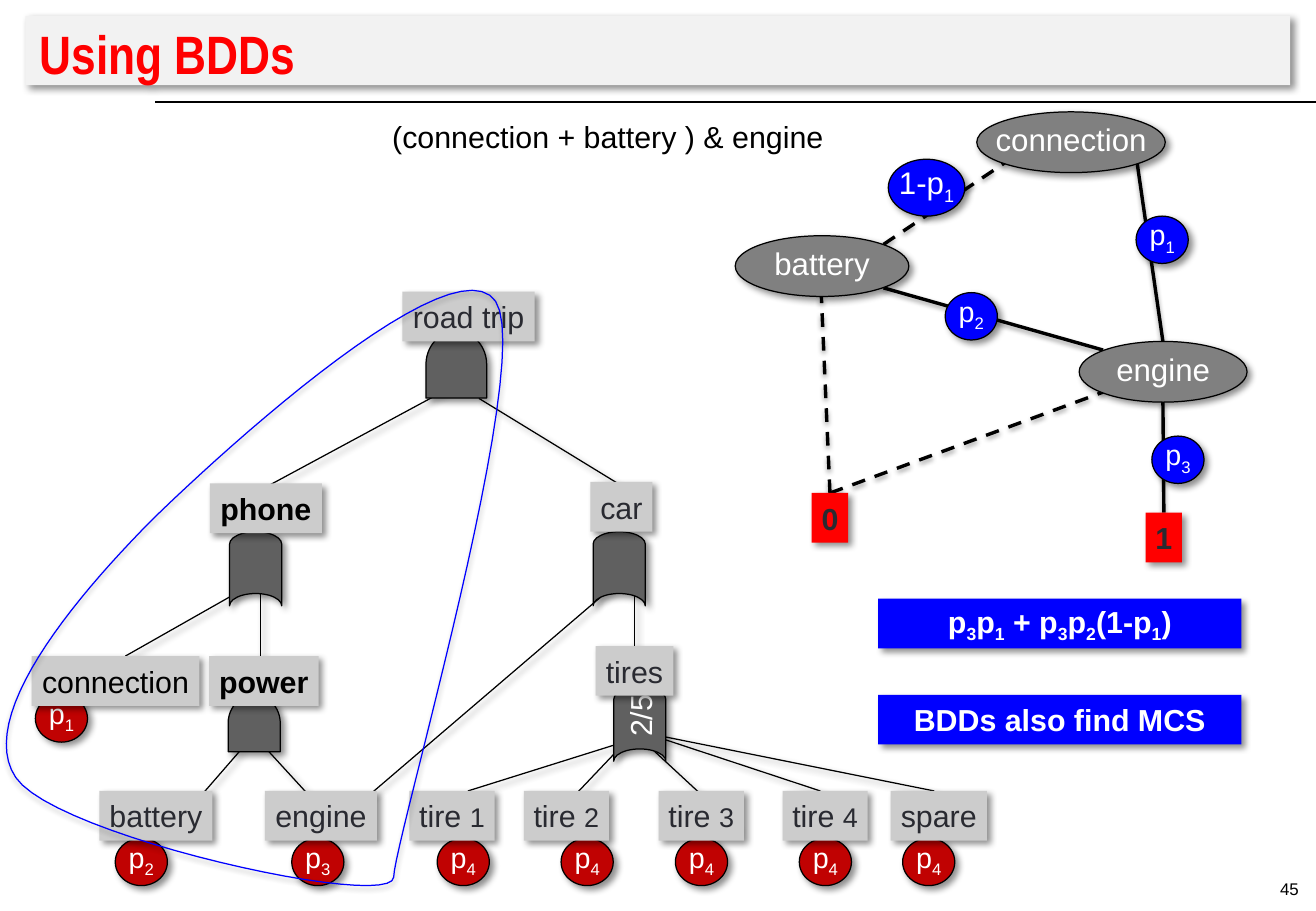
from pptx import Presentation
from pptx import util as u
from pptx.dml.color import RGBColor
from pptx.enum import dml, shapes, text
from pptx.oxml.ns import qn
from lxml import etree

theme = {
    "font": "Arial", "title font": "Arial Narrow",
    "black": "000000", "white": "FFFFFF", "ink": "292A31", "red": "FF0000",
    "band": "F2F2F2", "label": "CCCCCC", "gate": "606060", "event": "C00202",
    "node": "808080", "blue": "0000FF",
    "title": 32, "body": 18, "node text": 18.5, "chance": 17, "digit": 16, "number": 10,
}
CENTER, RIGHT, LEFT = text.PP_ALIGN.CENTER, text.PP_ALIGN.RIGHT, text.PP_ALIGN.LEFT
RECT, OVAL = shapes.MSO_SHAPE.RECTANGLE, shapes.MSO_SHAPE.OVAL
AND, OR = shapes.MSO_SHAPE.FLOWCHART_DELAY, shapes.MSO_SHAPE.FLOWCHART_STORED_DATA
BOX_SHADOW, EDGE_SHADOW, LOOP_SHADOW = (43, 4, 3, 45), (38, 3.1, 1.6, 90), (35, 3.1, 1.8, 90)
label_frame = {"margin_left": u.Cm(0.2), "margin_right": u.Cm(0.2), "word_wrap": False,
               "vertical_anchor": text.MSO_ANCHOR.MIDDLE}
oval_frame = {"margin_left": u.Cm(0.1), "margin_right": u.Cm(0.1), "margin_top": 0,
              "word_wrap": False, "vertical_anchor": text.MSO_ANCHOR.MIDDLE}
gate_frame = {"word_wrap": False, "vertical_anchor": text.MSO_ANCHOR.MIDDLE}


def cast_shadow(item, shadow):
    effects = etree.SubElement(item.element.spPr, qn("a:effectLst"))
    if shadow:
        alpha, blur, distance, angle = shadow
        outer = etree.SubElement(effects, qn("a:outerShdw"), blurRad=str(u.Pt(blur)),
                                 dist=str(u.Pt(distance)), dir=str(angle * 60000),
                                 algn="ctr", rotWithShape="0")
        colour = etree.SubElement(outer, qn("a:srgbClr"), val=theme["black"])
        etree.SubElement(colour, qn("a:alpha"), val=str(alpha * 1000))


def write(frame, words, frame_values, align, size, colour, bold=False, font="font", digit=None):
    for name, value in frame_values.items():
        setattr(frame, name, value)
    para = frame.paragraphs[0]
    para.alignment = align
    first, *rest = words.split("_")
    pieces = [(first, False)]
    for part in rest:
        pieces += [(part[0], True), (part[1:], False)]
    for piece, marked in pieces:
        if not piece:
            continue
        span = para.add_run()
        span.text = piece
        points = theme[digit] if marked and digit else theme[size]
        values = {"name": theme[font], "size": u.Pt(points), "bold": bold}
        for name, value in values.items():
            setattr(span.font, name, value)
        span.font.color.rgb = RGBColor.from_string(theme[colour])
        if marked and not digit:
            span.font._element.set("baseline", "-25000")


deck = Presentation()
deck.slide_width, deck.slide_height = u.Cm(27.51), u.Cm(19.05)
page = deck.slides.add_slide(deck.slide_layouts[5])

title = page.shapes.title
for name, value in zip(("left", "top", "width", "height"), (0.53, 0.33, 26.44, 1.45)):
    setattr(title, name, u.Cm(value))
title.fill.solid()
title.fill.fore_color.rgb = RGBColor.from_string(theme["band"])
cast_shadow(title, BOX_SHADOW)
title_frame = {"margin_left": u.Cm(0.3), "margin_bottom": 0, "auto_size": text.MSO_AUTO_SIZE.NONE,
               "vertical_anchor": text.MSO_ANCHOR.BOTTOM}
write(title.text_frame, "Using BDDs", title_frame, LEFT, "title", "red", True, "title font")

tree_edges = [
    (13.46, 15.32, 19.53, 16.54), (5.44, 15.52, 6.53, 16.71), (5.44, 13.72, 5.44, 12.12),
    (2.62, 13.72, 5.44, 12.12), (12.95, 10.13, 10.01, 8.33), (5.66, 10.13, 9.37, 8.13),
    (13.03, 15.52, 9.78, 16.54), (13.26, 15.32, 11.94, 16.71), (13.26, 15.32, 15.42, 17.32),
    (13.46, 15.32, 17.15, 16.54), (7.62, 16.71, 12.75, 12.32), (13.26, 13.92, 13.26, 11.91),
    (5, 15.72, 4.14, 16.71),
]
low_edges = [(17.35, 10.31, 23.06, 8.2), (17.35, 10.31, 17.17, 6.2), (18.47, 5.11, 21.01, 3.4)]
high_edges = [(23.77, 3.4, 24.31, 7.14), (24.31, 8.41, 24.33, 10.72), (18.47, 6.02, 23.06, 7.32)]
edge_groups = [
    ([(3.25, 2.13, 27.51, 2.13)], 1, None, None),
    (tree_edges, 0.75, None, BOX_SHADOW),
    (low_edges, 2, dml.MSO_LINE.DASH, EDGE_SHADOW),
    (high_edges, 2, None, EDGE_SHADOW),
]
for edges, weight, dash, shadow in edge_groups:
    for ends in edges:
        edge = page.shapes.add_connector(shapes.MSO_CONNECTOR.STRAIGHT, *map(u.Cm, ends))
        edge.line.color.rgb = RGBColor.from_string(theme["black"])
        edge.line.width = u.Pt(weight)
        if dash:
            edge.line.dash_style = dash
        cast_shadow(edge, shadow)

styles = {
    "and": (AND, "gate", True, 270, (gate_frame, LEFT, "body", "white")),
    "or": (OR, "gate", True, 90, (gate_frame, LEFT, "body", "white")),
    "event": (OVAL, "event", True, 0, (oval_frame, CENTER, "chance", "white")),
    "chance": (OVAL, "blue", True, 0, (oval_frame, CENTER, "chance", "white")),
    "wide chance": (OVAL, "blue", True, 0, (oval_frame, CENTER, "node text", "white")),
    "node": (OVAL, "node", True, 0, (oval_frame, CENTER, "node text", "white")),
    "label": (RECT, "label", False, 0, (label_frame, CENTER, "body", "ink", False, "font", "digit")),
    "dark label": (RECT, "label", False, 0, (label_frame, CENTER, "body", "black")),
    "bold label": (RECT, "label", False, 0, (label_frame, CENTER, "body", "black", True)),
    "leaf": (RECT, "red", False, 0, (label_frame, CENTER, "body", "ink", True)),
    "result": (RECT, "blue", False, 0, (label_frame, CENTER, "body", "white", True)),
}
basic_events = [
    ("label", "battery", 2.08, 16.54, 2.36, "p_2", 2.41, 17.53),
    ("label", "engine", 5.54, 16.54, 2.34, "p_3", 6.1, 17.53),
    ("label", "tire _1", 8.56, 16.54, 1.78, "p_4", 9.14, 17.53),
    ("label", "tire _2", 10.95, 16.54, 1.78, "p_4", 11.73, 17.53),
    ("label", "tire _3", 13.77, 16.54, 1.78, "p_4", 14.12, 17.53),
    ("label", "tire _4", 16.36, 16.54, 1.78, "p_4", 16.71, 17.53),
    ("label", "spare", 18.62, 16.54, 2.01, "p_4", 18.87, 17.53),
    ("dark label", "connection", 0.66, 13.72, 3.51, "p_1", 0.74, 14.53),
]
boxes = [
    ("and", "", 8.84, 6.99, 1.4, 1.27),
    ("and", "", 4.72, 14.58, 1.19, 1.09),
    ("or", "", 12.17, 11.35, 1.55, 1.09),
    ("or", "", 4.57, 11.35, 1.55, 1.09),
    ("or", "2/5", 12.6, 14.6, 1.55, 1.09),
    ("label", "road trip", 8.41, 6.1, 2.77, 1.04),
    ("label", "car", 12.34, 10.08, 1.3, 1.04),
    ("label", "tires", 12.45, 13.51, 1.63, 1.04),
    ("bold label", "phone", 4.39, 10.11, 2.34, 1.04),
    ("bold label", "power", 4.37, 13.72, 2.29, 1.04),
    ("node", "connection", 20.42, 2.34, 3.94, 1.27),
    ("node", "battery", 15.37, 4.93, 3.63, 1.27),
    ("node", "engine", 22.56, 7.14, 3.51, 1.27),
    ("leaf", "0", 16.97, 10.31, 0.76, 1.04),
    ("leaf", "1", 23.95, 10.72, 0.76, 1.04),
    ("chance", "p_1", 23.75, 4.52, 1.09, 0.99),
    ("chance", "p_2", 19.76, 6.12, 1.09, 0.99),
    ("chance", "p_3", 24.08, 9.12, 1.09, 0.99),
    ("wide chance", "1-p_1", 18.57, 3.33, 1.6, 1.19),
    ("result", "p_3p_1 + p_3p_2(1-p_1)", 18.36, 12.52, 7.59, 1.04),
    ("result", "BDDs also find MCS", 18.36, 14.53, 7.59, 1.04),
]
for style, words, left, top, width, chance, chance_left, chance_top in basic_events:
    boxes.append(("event", chance, chance_left, chance_top, 1.09, 0.99))
    boxes.append((style, words, left, top, width, 1.04))

for style, words, *place in boxes:
    kind, fill, outlined, turn, look = styles[style]
    box = page.shapes.add_shape(kind, *map(u.Cm, place))
    box.rotation = turn
    box.fill.solid()
    box.fill.fore_color.rgb = RGBColor.from_string(theme[fill])
    if outlined:
        box.line.color.rgb = RGBColor.from_string(theme["black"])
        box.line.width = u.Pt(0.75)
    else:
        box.line.fill.background()
    if style == "or":
        box.element.spPr.find(qn("a:xfrm")).set("flipV", "1")
    cast_shadow(box, BOX_SHADOW)
    if words:
        write(box.text_frame, words, *look)

formula = page.shapes.add_textbox(*map(u.Cm, (7.95, 2.34, 9.63, 1.02)))
write(formula.text_frame, "(connection + battery ) & engine", {"word_wrap": False},
      LEFT, "body", "black")

number = page.shapes.add_textbox(*map(u.Cm, (25.25, 18.14, 1.9, 0.9)))
write(number.text_frame, "45", {"margin_right": 0, "word_wrap": True}, RIGHT, "number", "black")
number.text_frame.paragraphs[0].line_spacing = u.Pt(15)

start = (3.15, 10.9)
curves = [
    ((4.83, 9.25), (9.5, 5.05), (10.36, 6.3)),
    ((11.2, 7.54), (8.23, 17.63), (8.23, 18.34)),
    ((8.23, 19.05), (1.17, 17.5), (0.33, 16.26)),
    ((-0.51, 15.01), (1.5, 12.57), start),
]
points, corner, steps = [], start, 24
for bend_out, bend_in, end in curves:
    for step in range(1, steps + 1):
        t = step / steps
        points.append([u.Cm((1 - t) ** 3 * a + 3 * t * (1 - t) ** 2 * b + 3 * t * t * (1 - t) * c + t ** 3 * d)
                       for a, b, c, d in zip(corner, bend_out, bend_in, end)])
    corner = end
builder = page.shapes.build_freeform(*map(u.Cm, start))
builder.add_line_segments(points, close=True)
outline = builder.convert_to_shape()
outline.fill.background()
outline.line.color.rgb = RGBColor.from_string(theme["blue"])
outline.line.width = u.Pt(0.75)
cast_shadow(outline, LOOP_SHADOW)

deck.save("out.pptx")
